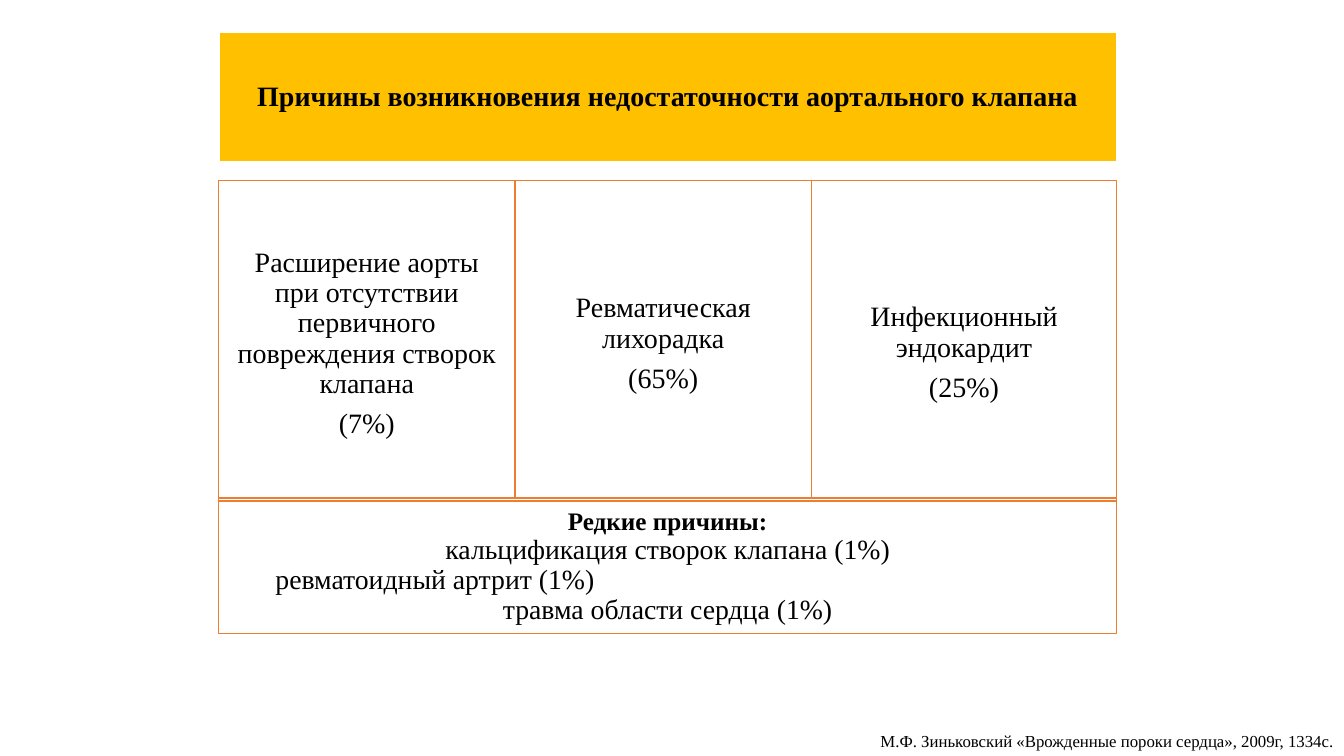
"""Builds a slide on the causes of aortic valve insufficiency."""
from dataclasses import dataclass

import lxml.etree
import pptx
import pptx.dml.color
import pptx.enum.shapes
import pptx.enum.text
import pptx.oxml.ns
import pptx.shapes.autoshape
import pptx.slide
import pptx.text.text
import pptx.util

Cm, Pt = pptx.util.Cm, pptx.util.Pt
ALIGN = pptx.enum.text.PP_ALIGN
FONT = "Times New Roman"
BLACK, WHITE, AMBER, ORANGE = "000000", "FFFFFF", "FFC000", "ED7D31"
LEFT, WIDTH = 5.51, 22.63
CAUSE_TOP, CAUSE_WIDTH = 4.55, 7.47


@dataclass
class Cause:
    """A main cause with its share and the size of its box in centimetres."""
    text: str
    share: str
    width: float = CAUSE_WIDTH
    height: float = 8.23


CAUSES = [
    Cause("Расширение аорты\vпри отсутствии первичного повреждения створок клапана", "(7%)"),
    Cause("Ревматическая лихорадка", "(65%)"),
    Cause("Инфекционный эндокардит", "(25%)", WIDTH - 2 * CAUSE_WIDTH, 8.69),
]


def rgb(color: str) -> pptx.dml.color.RGBColor:
    """Turn a hex string into a colour."""
    return pptx.dml.color.RGBColor.from_string(color)


def place(sp: pptx.shapes.autoshape.Shape, left: float, top: float,
          width: float, height: float) -> None:
    """Position a shape, in centimetres."""
    sp.left, sp.top, sp.width, sp.height = Cm(left), Cm(top), Cm(width), Cm(height)


def paint(sp: pptx.shapes.autoshape.Shape, fill: str, line: str, weight: float) -> None:
    """Give a shape a solid fill and an outline."""
    sp.fill.solid()
    sp.fill.fore_color.rgb = rgb(fill)
    sp.line.color.rgb = rgb(line)
    sp.line.width = Pt(weight)


def add_box(s: pptx.slide.Slide, left: float, top: float,
            width: float, height: float) -> pptx.shapes.autoshape.Shape:
    """Add a white box with an orange outline."""
    kind = pptx.enum.shapes.MSO_SHAPE.RECTANGLE
    sp = s.shapes.add_shape(kind, Cm(left), Cm(top), Cm(width), Cm(height))
    sp.shadow.inherit = False
    paint(sp, WHITE, ORANGE, 1)
    return sp


def set_frame(tf: pptx.text.text.TextFrame, inset: float = 0.2) -> None:
    """Wrap and vertically centre text at a fixed size."""
    tf.word_wrap = True
    tf.auto_size = pptx.enum.text.MSO_AUTO_SIZE.NONE
    tf.vertical_anchor = pptx.enum.text.MSO_ANCHOR.MIDDLE
    tf.margin_left = tf.margin_right = tf.margin_top = tf.margin_bottom = Cm(inset)


def write(tf: pptx.text.text.TextFrame, text: str, *, size: float = 20,
          bold: bool = False, align: ALIGN = ALIGN.CENTER, spacing: float = 0.9,
          after: float = 0, indent: float = 0) -> None:
    """Write one paragraph without a bullet, filling an empty first one."""
    p = tf.paragraphs[0] if not tf.text else tf.add_paragraph()
    p.text = text
    p.alignment, p.line_spacing = align, spacing
    p.space_before, p.space_after = Pt(0), Pt(after)
    for r in p.runs:
        r.font.name, r.font.size, r.font.bold = FONT, Pt(size), bold
        r.font.color.rgb = rgb(BLACK)
    pPr = p._p.get_or_add_pPr()
    pPr.set("marL", str(Cm(indent)))
    pPr.set("indent", "0")
    lxml.etree.SubElement(pPr, pptx.oxml.ns.qn("a:buNone"))


def add_heading(s: pptx.slide.Slide) -> None:
    """Format the title as an amber bar."""
    sp = s.shapes.title
    place(sp, LEFT, 0.81, WIDTH, 3.28)
    paint(sp, AMBER, WHITE, 1.5)
    set_frame(sp.text_frame)
    write(sp.text_frame, "Причины возникновения недостаточности аортального клапана",
          bold=True, after=7)


def add_causes(s: pptx.slide.Slide) -> None:
    """Add the row of main causes."""
    for i, cause in enumerate(CAUSES):
        sp = add_box(s, LEFT + i * CAUSE_WIDTH, CAUSE_TOP, cause.width, cause.height)
        set_frame(sp.text_frame)
        write(sp.text_frame, cause.text, after=7)
        write(sp.text_frame, cause.share, after=7)


def add_rare_causes(s: pptx.slide.Slide) -> None:
    """Format the body as the list of rare causes, in front of the other boxes."""
    add_box(s, LEFT, 12.55, WIDTH, 2.39)
    sp = s.placeholders[1]
    s.shapes._spTree.append(sp._element)
    place(sp, LEFT, 12.62, WIDTH, 3.35)
    paint(sp, WHITE, ORANGE, 1)
    tf = sp.text_frame
    set_frame(tf, 0.13)
    write(tf, "Редкие причины:", size=18, bold=True)
    write(tf, "кальцификация створок клапана (1%)", size=19.8)
    write(tf, "ревматоидный артрит (1%)", size=19.8, align=ALIGN.LEFT, indent=1.3)
    write(tf, "травма области сердца (1%)", size=19.8)


def add_reference(s: pptx.slide.Slide) -> None:
    """Add the literature reference at the bottom right."""
    tf = s.shapes.add_textbox(Cm(10.31), Cm(18.29), Cm(23.56), Cm(0.77)).text_frame
    tf.word_wrap = True
    write(tf, "М.Ф. Зиньковский «Врожденные пороки сердца», 2009г, 1334с.",
          size=12, align=ALIGN.RIGHT, spacing=1)


def main() -> None:
    """Build and save the presentation."""
    prs = pptx.Presentation()
    prs.slide_width, prs.slide_height = Cm(33.87), Cm(19.05)
    s = prs.slides.add_slide(prs.slide_layouts[1])
    add_reference(s)
    add_heading(s)
    add_causes(s)
    add_rare_causes(s)
    prs.save("out.pptx")


if __name__ == "__main__":
    main()
